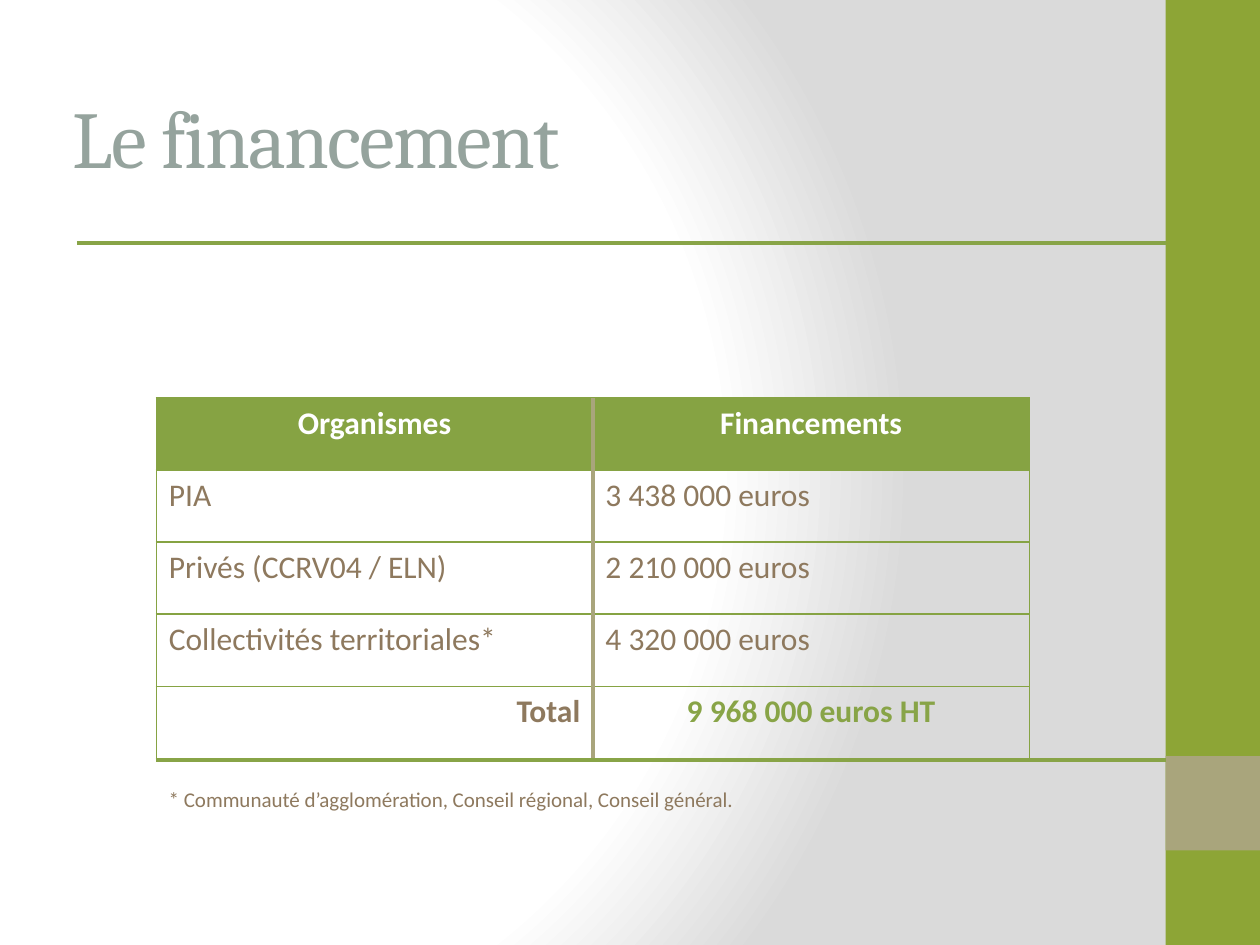
from lxml import etree
from pptx import Presentation
from pptx import util as u
from pptx.dml.color import RGBColor
from pptx.enum import shapes, text
from pptx.oxml import ns

GREEN, EDGE, SAND, BROWN, WHITE = "88A447", "86A343", "A9A57C", "8E795E", "FFFFFF"
LEFT, CENTER, RIGHT = text.PP_ALIGN.LEFT, text.PP_ALIGN.CENTER, text.PP_ALIGN.RIGHT


def color(value):
    return RGBColor.from_string(value)


def add_node(parent, tag, **attributes):
    return etree.SubElement(parent, ns.qn(tag), attributes)


class Painter:
    """Draws styled elements on one page, measured on a grid of 40 by 30 cells."""

    font = "Calibri"
    cell = 0.25

    def __init__(self, deck):
        deck.slide_width, deck.slide_height = self.grid(40, 30)
        self.page = deck.slides.add_slide(deck.slide_layouts[6])

    def grid(self, *cells):
        return [u.Inches(count * self.cell) for count in cells]

    def background(self, stops, **focus):
        self.page.background.fill.gradient()
        gradient = self.page.background._cSld.find(".//" + ns.qn("a:gradFill"))
        gradient.clear()
        stop_list = add_node(gradient, "a:gsLst")
        for share, value in stops:
            stop = add_node(stop_list, "a:gs", pos=str(share * 1000))
            add_node(stop, "a:srgbClr", val=value)
        circle = add_node(gradient, "a:path", path="circle")
        add_node(circle, "a:fillToRect", **{side: str(share * 1000) for side, share in focus.items()})

    def block(self, place, fill):
        box = self.page.shapes.add_shape(shapes.MSO_SHAPE.RECTANGLE, *self.grid(*place))
        box.shadow.inherit = False
        box.fill.solid()
        box.fill.fore_color.rgb = color(fill)
        box.line.fill.background()

    def line(self, start, end, stroke):
        rule = self.page.shapes.add_connector(
            shapes.MSO_CONNECTOR.STRAIGHT, *self.grid(*start, *end))
        rule.line.color.rgb = color(stroke)
        rule.line.width = u.Pt(2)
        add_node(rule._element.spPr, "a:effectLst")

    def fill_text(self, frame, words, size, ink, font=None, bold=False, align=LEFT):
        para = frame.paragraphs[0]
        para.alignment = align
        span = para.add_run()
        span.text = words
        style = para.font
        style.name, style.size, style.bold = font or self.font, u.Pt(size), bold
        style.color.rgb = color(ink)
        return span

    def text(self, place, words, size, ink, font=None, anchor=text.MSO_ANCHOR.TOP, spacing=0):
        frame = self.page.shapes.add_textbox(*self.grid(*place)).text_frame
        frame.word_wrap = True
        frame.vertical_anchor = anchor
        span = self.fill_text(frame, words, size, ink, font)
        if spacing:
            span.font._element.set("spc", str(spacing * 100))

    def border(self, cell, stroke):
        properties = cell._tc.get_or_add_tcPr()
        for index, side in enumerate("LRTB"):
            edge = add_node(properties, f"a:ln{side}", w=str(u.Pt(1)))
            add_node(add_node(edge, "a:solidFill"), "a:srgbClr", val=stroke)
            properties.insert(index, edge)

    def table(self, place, rows, styles):
        grid = self.page.shapes.add_table(len(rows), len(rows[0]), *self.grid(*place)).table
        grid.first_row = grid.horz_banding = False
        for r, row in enumerate(rows):
            for c, words in enumerate(row):
                cell = grid.cell(r, c)
                if r == 0:
                    cell.fill.solid()
                    cell.fill.fore_color.rgb = color(EDGE)
                else:
                    cell.fill.background()
                self.border(cell, EDGE)
                self.fill_text(cell.text_frame, words, 18, **styles[r][c])


def main():
    deck = Presentation()
    painter = Painter(deck)
    painter.background([(0, WHITE), (75, WHITE), (100, "DADADA")], l=20, t=50, r=100, b=50)

    band = 37
    painter.block((band, 0, 3, 30), "8DA536")
    painter.block((band, 24, 3, 3), SAND)
    painter.text((1.92, 2.6, 33.32, 3.44), "Le financement", 46, "95A39D",
                 font="Cambria", anchor=text.MSO_ANCHOR.MIDDLE, spacing=-1)
    painter.line((2.44, 7.72), (band, 7.72), GREEN)

    left, top, width, height = 4.96, 12.64, 27.72, 11.44
    rows = [
        ("Organismes", "Financements"),
        ("PIA", "3 438 000 euros"),
        ("Privés (CCRV04 / ELN)", "2 210 000 euros"),
        ("Collectivités territoriales*", "4 320 000 euros"),
        ("Total", "9 968 000 euros HT"),
    ]
    header = [dict(ink=WHITE, bold=True, align=CENTER)] * 2
    body = [dict(ink=BROWN)] * 2
    total = [dict(ink=BROWN, bold=True, align=RIGHT), dict(ink=GREEN, bold=True, align=CENTER)]
    painter.table((left, top, width, height), rows, [header, body, body, body, total])

    middle, bottom = left + width / 2, top + height
    painter.line((middle, top), (middle, bottom), SAND)
    painter.line((left, bottom + 0.04), (band, bottom + 0.04), GREEN)
    painter.text((left, 24.76, 26.56, 1.2),
                 "* Communauté d’agglomération, Conseil régional, Conseil général.", 12, BROWN)
    deck.save("out.pptx")


if __name__ == "__main__":
    main()
